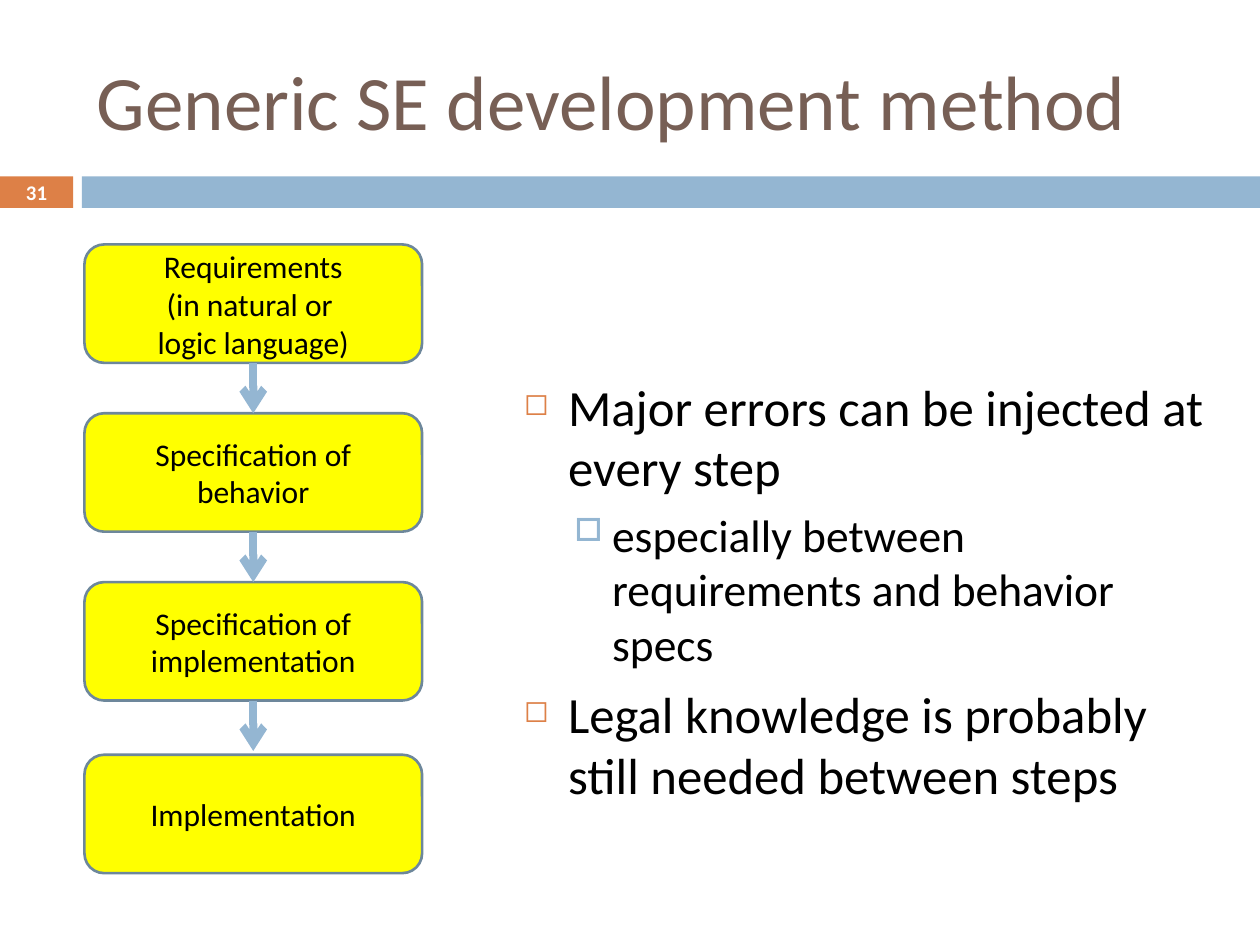
from dataclasses import dataclass

from lxml.etree import SubElement
from pptx import Presentation
from pptx.dml.color import RGBColor
from pptx.enum.shapes import MSO_CONNECTOR, MSO_SHAPE
from pptx.enum.text import MSO_ANCHOR, PP_ALIGN
from pptx.oxml.ns import qn
from pptx.util import Inches, Pt


@dataclass(frozen=True)
class Theme:
    font: str = "Calibri"
    title: str = "775F55"
    accent: str = "DD8047"
    band: str = "94B6D2"
    step_fill: str = "FFFF00"
    step_line: str = "6D879B"
    ink: str = "000000"
    white: str = "FFFFFF"
    title_size: float = 44
    number_size: float = 11.9
    step_size: float = 18


@dataclass(frozen=True)
class Area:
    left: float
    top: float
    width: float
    height: float

    def lengths(self) -> tuple:
        return tuple(map(Inches, (self.left, self.top, self.width, self.height)))


@dataclass(frozen=True)
class Step:
    text: str
    top: float


@dataclass(frozen=True)
class BulletStyle:
    level: int
    size: float
    before: float
    margin: float
    indent: float
    mark: str
    color: str
    scale: int


THEME = Theme()
STEP_LEFT, STEP_WIDTH, STEP_HEIGHT = 0.67, 2.68, 0.94
FIRST_TOP, STEP_PITCH, ARROW_LENGTH = 1.94, 1.34, 0.4
STEPS = [
    Step("Requirements\n(in natural or \nlogic language)", FIRST_TOP),
    Step("Specification of behavior", FIRST_TOP + STEP_PITCH),
    Step("Specification of implementation", FIRST_TOP + 2 * STEP_PITCH),
    Step("Implementation", 5.99),
]
POINT = BulletStyle(0, 29, 7, 0.35, -0.35, "◻", THEME.accent, 60)
DETAIL = BulletStyle(1, 26, 5.5, 0.7, -0.3, "□", THEME.band, 70)
BULLETS = [
    ("Major errors can be injected at every step", POINT),
    ("especially between requirements and behavior specs", DETAIL),
    ("Legal knowledge is probably still needed between steps", POINT),
]


def style_paragraph(para, size: float, color: str, bold: bool = False) -> None:
    for span in para.runs:
        span.font.name = THEME.font
        span.font.size = Pt(size)
        span.font.bold = bold
        span.font.color.rgb = RGBColor.from_string(color)


def set_text(box, text: str, size: float, color: str,
             align=PP_ALIGN.CENTER, bold: bool = False) -> None:
    frame = box.text_frame
    frame.word_wrap = True
    frame.vertical_anchor = MSO_ANCHOR.MIDDLE
    frame.text = text
    for para in frame.paragraphs:
        para.alignment = align
        style_paragraph(para, size, color, bold)


def add_block(page, kind, area: Area, fill: str):
    block = page.shapes.add_shape(kind, *area.lengths())
    block.shadow.inherit = False
    block.fill.solid()
    block.fill.fore_color.rgb = RGBColor.from_string(fill)
    block.line.fill.background()
    return block


def add_step(page, step: Step) -> None:
    area = Area(STEP_LEFT, step.top, STEP_WIDTH, STEP_HEIGHT)
    box = add_block(page, MSO_SHAPE.ROUNDED_RECTANGLE, area, THEME.step_fill)
    box.line.color.rgb = RGBColor.from_string(THEME.step_line)
    box.line.width = Pt(1.5)
    set_text(box, step.text, THEME.step_size, THEME.ink)


def add_arrow(page, step: Step) -> None:
    center = Inches(STEP_LEFT + STEP_WIDTH / 2)
    start = step.top + STEP_HEIGHT
    arrow = page.shapes.add_connector(
        MSO_CONNECTOR.STRAIGHT, center, Inches(start), center, Inches(start + ARROW_LENGTH))
    arrow.line.color.rgb = RGBColor.from_string(THEME.band)
    arrow.line.width = Pt(4.5)
    SubElement(arrow.line._get_or_add_ln(), qn("a:tailEnd"), type="arrow")
    SubElement(arrow._element.spPr, qn("a:effectLst"))


def format_bullet(para, style: BulletStyle) -> None:
    para.level = style.level
    para.space_before = Pt(style.before)
    style_paragraph(para, style.size, THEME.ink)
    properties = para._p.get_or_add_pPr()
    properties.set("marL", str(Inches(style.margin)))
    properties.set("indent", str(Inches(style.indent)))
    bullet_color = SubElement(properties, qn("a:buClr"))
    SubElement(bullet_color, qn("a:srgbClr"), val=style.color)
    SubElement(properties, qn("a:buSzPct"), val=str(style.scale * 1000))
    SubElement(properties, qn("a:buChar"), char=style.mark)


def main() -> None:
    deck = Presentation()
    deck.slide_width, deck.slide_height = Inches(10), Inches(7.5)
    page = deck.slides.add_slide(deck.slide_layouts[6])

    # Band with the page number
    add_block(page, MSO_SHAPE.RECTANGLE, Area(0, 1.4, 0.58, 0.25), THEME.accent)
    add_block(page, MSO_SHAPE.RECTANGLE, Area(0.65, 1.4, 9.35, 0.25), THEME.band)
    number = page.shapes.add_textbox(*Area(0, 1.39, 0.58, 0.27).lengths())
    set_text(number, "31", THEME.number_size, THEME.white, bold=True)

    # Title
    title = page.shapes.add_textbox(*Area(0.67, 0.25, 8.92, 1.08).lengths())
    set_text(title, "Generic SE development method", THEME.title_size,
             THEME.title, PP_ALIGN.LEFT)

    # Development steps, joined by arrows
    for step in STEPS:
        add_step(page, step)
    for step in STEPS[:-1]:
        add_arrow(page, step)

    # Remarks
    remarks = page.shapes.add_textbox(*Area(4.06, 2.93, 5.75, 3.74).lengths())
    remarks.text_frame.word_wrap = True
    remarks.text_frame.text = "\n".join(text for text, _ in BULLETS)
    for para, (_, style) in zip(remarks.text_frame.paragraphs, BULLETS):
        format_bullet(para, style)

    deck.save("out.pptx")


if __name__ == "__main__":
    main()
